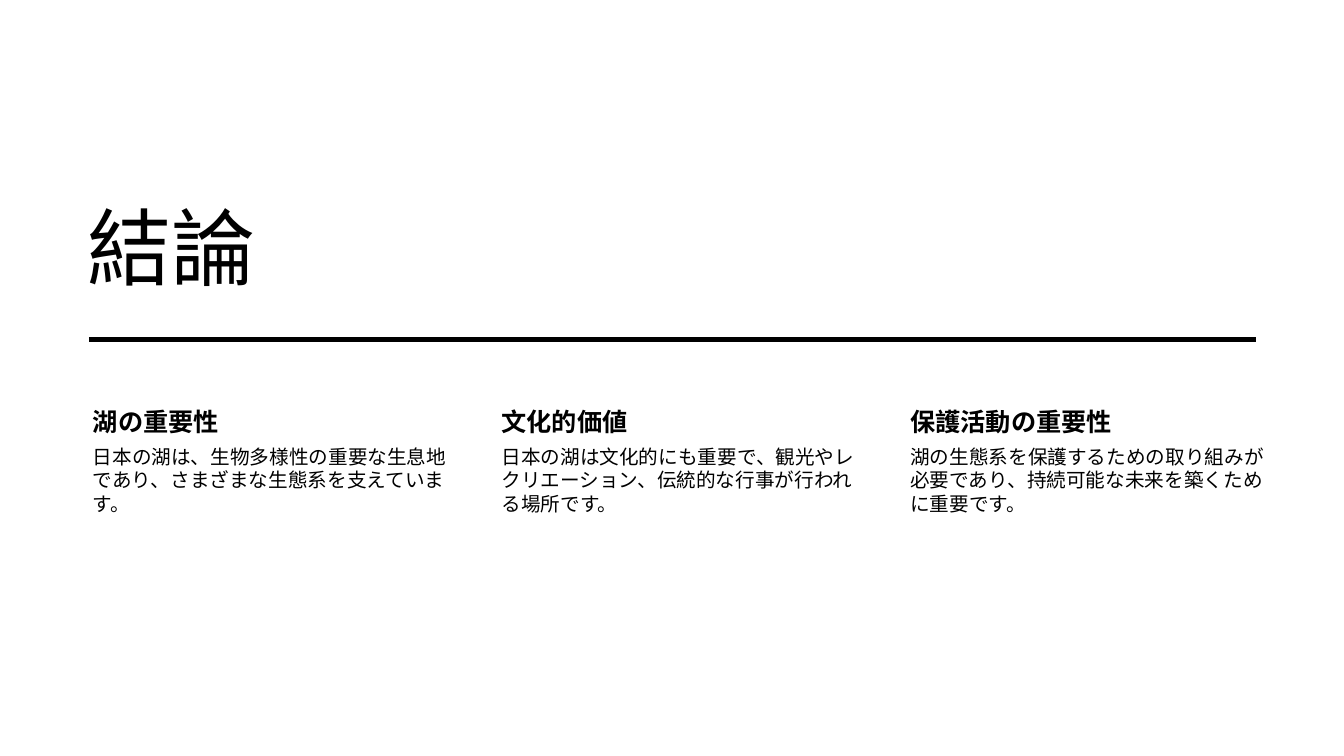
from dataclasses import dataclass

from lxml.etree import SubElement
from pptx import Presentation
from pptx.dml.color import RGBColor
from pptx.enum.shapes import MSO_CONNECTOR
from pptx.enum.text import MSO_ANCHOR as Anchor
from pptx.oxml.ns import qn
from pptx.slide import Slide
from pptx.util import Cm, Pt


@dataclass(frozen=True)
class Theme:
    ink: RGBColor = RGBColor(0, 0, 0)
    paper: RGBColor = RGBColor(255, 255, 255)
    title_font: str = "Roboto Condensed"
    body_font: str = "Arial"
    title_size: int = 60
    heading_size: int = 18
    body_size: int = 14
    rule_width: float = 3.5


@dataclass(frozen=True)
class Box:
    """A text area in centimetres; insets run left, top, right, bottom."""
    left: float
    top: float
    width: float
    height: float
    insets: tuple[float, float, float, float]


@dataclass(frozen=True)
class Conclusion:
    heading: str
    body: str


THEME = Theme()
TITLE_BOX = Box(1.96, 3.56, 22.2, 3.91, (0.25, 0.13, 0.25, 0))
COLUMN_LEFT, COLUMN_STEP, COLUMN_WIDTH = 1.96, 10.3, 9.37
HEADING_TOP, HEADING_HEIGHT, BODY_HEIGHT = 10.16, 0.99, 5.94
HEADING_INSETS = (0.38, 0.08, 0.08, 0.08)
BODY_INSETS = (0.38, 0.05, 0.05, 0.05)
RULE_LEFT, RULE_RIGHT, RULE_TOP = 2.24, 31.65, 8.56

CONCLUSIONS = (
    Conclusion("湖の重要性",
               "日本の湖は、生物多様性の重要な生息地であり、さまざまな生態系を支えています。"),
    Conclusion("文化的価値",
               "日本の湖は文化的にも重要で、観光やレクリエーション、伝統的な行事が行われる場所です。"),
    Conclusion("保護活動の重要性",
               "湖の生態系を保護するための取り組みが必要であり、持続可能な未来を築くために重要です。"),
)


def add_text(slide: Slide, box: Box, text: str, font: str, size: int,
             bold: bool = False, anchor: Anchor = Anchor.TOP, tracking: float = 0) -> None:
    """Add one run of text; tracking is the letter spacing in points."""
    shape = slide.shapes.add_textbox(Cm(box.left), Cm(box.top), Cm(box.width), Cm(box.height))
    frame = shape.text_frame
    frame.word_wrap = True
    frame.vertical_anchor = anchor
    (frame.margin_left, frame.margin_top,
     frame.margin_right, frame.margin_bottom) = map(Cm, box.insets)
    run = frame.paragraphs[0].add_run()
    run.text = text
    run.font.name = font
    run.font.size = Pt(size)
    run.font.bold = bold
    run.font.color.rgb = THEME.ink
    if tracking:
        run.font._element.set("spc", str(round(tracking * 100)))


def add_conclusion(slide: Slide, left: float, conclusion: Conclusion) -> None:
    heading_box = Box(left, HEADING_TOP, COLUMN_WIDTH, HEADING_HEIGHT, HEADING_INSETS)
    body_box = Box(left, HEADING_TOP + HEADING_HEIGHT, COLUMN_WIDTH, BODY_HEIGHT, BODY_INSETS)
    add_text(slide, heading_box, conclusion.heading, THEME.body_font, THEME.heading_size, bold=True)
    add_text(slide, body_box, conclusion.body, THEME.body_font, THEME.body_size)


def add_rule(slide: Slide) -> None:
    rule = slide.shapes.add_connector(
        MSO_CONNECTOR.STRAIGHT, Cm(RULE_LEFT), Cm(RULE_TOP), Cm(RULE_RIGHT), Cm(RULE_TOP))
    rule.line.color.rgb = THEME.ink
    rule.line.width = Pt(THEME.rule_width)
    SubElement(rule._element.spPr, qn("a:effectLst"))


def main() -> None:
    presentation = Presentation()
    presentation.slide_width, presentation.slide_height = Cm(33.87), Cm(19.05)
    slide = presentation.slides.add_slide(presentation.slide_layouts[6])
    slide.background.fill.solid()
    slide.background.fill.fore_color.rgb = THEME.paper
    add_text(slide, TITLE_BOX, "結論", THEME.title_font, THEME.title_size,
             anchor=Anchor.BOTTOM, tracking=0.3)
    for index, conclusion in enumerate(CONCLUSIONS):
        add_conclusion(slide, COLUMN_LEFT + index * COLUMN_STEP, conclusion)
    add_rule(slide)
    presentation.save("out.pptx")


if __name__ == "__main__":
    main()
